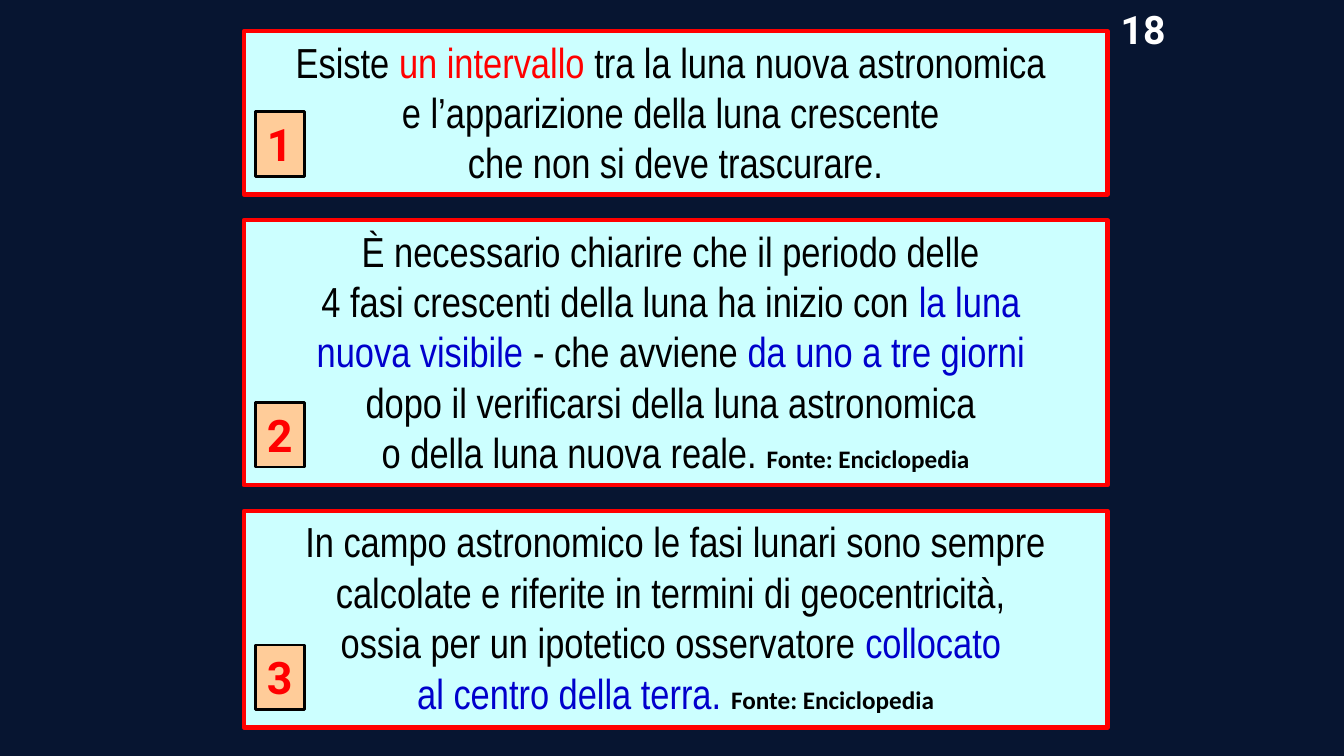
import pptx
import pptx.dml.color
import pptx.enum.shapes
import pptx.enum.text
import pptx.oxml.ns
import pptx.util
from dataclasses import dataclass
from lxml import etree

Pt = pptx.util.Pt


@dataclass(frozen=True)
class Theme:
    night: str = "071531"
    panel: str = "CCFFFF"
    badge: str = "FFCC99"
    red: str = "FF0000"
    blue: str = "0000CC"
    black: str = "000000"
    white: str = "FFFFFF"
    body_font: str = "Arial Narrow"
    source_font: str = "Calibri"
    number_font: str = "Roboto"
    body_size: int = 30
    source_size: int = 18
    badge_size: int = 32
    page_size: int = 28


THEME = Theme()
SOURCE = "source"
PANEL_LEFT, PANEL_WIDTH, PANEL_GAP, FIRST_TOP = 174.2, 617, 18.3, 22.3
PAGE_NUMBER_BOX = (791.3, 0, 50.4, 41)

# Each statement: panel height, then paragraphs of (text, colour or SOURCE)
STATEMENTS = [
    (116.6, [
        [("Esiste ", THEME.black), ("un intervallo ", THEME.red),
         ("tra la luna nuova astronomica ", THEME.black)],
        [("e l’apparizione della luna crescente ", THEME.black)],
        [("che non si deve trascurare.", THEME.black)],
    ]),
    (189.4, [
        [("È necessario chiarire che il periodo delle ", THEME.black)],
        [("4 fasi crescenti della luna ha inizio con ", THEME.black),
         ("la luna ", THEME.blue)],
        [("nuova visibile ", THEME.blue), ("- che avviene ", THEME.black),
         ("da uno a tre giorni ", THEME.blue)],
        [("dopo il verificarsi della luna astronomica ", THEME.black)],
        [("o della luna nuova reale. ", THEME.black),
         ("Fonte: Enciclopedia", SOURCE)],
    ]),
    (154.8, [
        [("In campo astronomico le fasi lunari sono sempre calcolate "
          "e riferite in termini di geocentricità, ", THEME.black)],
        [("ossia per un ipotetico osservatore ", THEME.black),
         ("collocato ", THEME.blue)],
        [("al centro della terra. ", THEME.blue),
         ("Fonte: Enciclopedia", SOURCE)],
    ]),
]


def rgb(colour):
    return pptx.dml.color.RGBColor.from_string(colour)


def add_run(paragraph, text, font, size, colour, bold=False):
    run = paragraph.add_run()
    run.text = text
    run.font.name = font
    run.font.size = Pt(size)
    run.font.bold = bold
    run.font.color.rgb = rgb(colour)
    return run


def outline_run(run, colour):
    """Thin outline in the colour of the letters."""
    qn = pptx.oxml.ns.qn
    outline = etree.Element(qn("a:ln"), w=str(Pt(0.75)))
    fill = etree.SubElement(outline, qn("a:solidFill"))
    etree.SubElement(fill, qn("a:srgbClr"), val=colour)
    run.font._element.insert(0, outline)


def set_frame(shape, wrap):
    frame = shape.text_frame
    frame.word_wrap = wrap
    frame.auto_size = pptx.enum.text.MSO_AUTO_SIZE.SHAPE_TO_FIT_TEXT
    frame.vertical_anchor = pptx.enum.text.MSO_ANCHOR.TOP
    frame.paragraphs[0].alignment = pptx.enum.text.PP_ALIGN.CENTER
    return frame


def add_box(slide, box, fill, line, line_width):
    shape = slide.shapes.add_shape(
        pptx.enum.shapes.MSO_SHAPE.RECTANGLE, *map(Pt, box))
    shape.shadow.inherit = False
    shape.fill.solid()
    shape.fill.fore_color.rgb = rgb(fill)
    shape.line.color.rgb = rgb(line)
    shape.line.width = Pt(line_width)
    return shape


def add_statement(slide, box, number, paragraphs):
    """Framed statement with its number badge at the lower left."""
    left, top, width, height = box
    panel = add_box(slide, box, THEME.panel, THEME.red, 3)
    frame = set_frame(panel, wrap=True)
    for index, parts in enumerate(paragraphs):
        line = frame.add_paragraph() if index else frame.paragraphs[0]
        line.alignment = pptx.enum.text.PP_ALIGN.CENTER
        for text, style in parts:
            if style == SOURCE:
                add_run(line, text, THEME.source_font, THEME.source_size,
                        THEME.black, bold=True)
            else:
                run = add_run(line, text, THEME.body_font, THEME.body_size, style)
                outline_run(run, style)

    # Number badge
    badge_height = 46
    badge_box = (left + 8, top + height - 13 - badge_height, 35.3, badge_height)
    badge = add_box(slide, badge_box, THEME.badge, THEME.black, 2)
    label = set_frame(badge, wrap=False).paragraphs[0]
    add_run(label, str(number), THEME.number_font, THEME.badge_size,
            THEME.red, bold=True)


def add_page_number(slide, box, number):
    page = slide.shapes.add_textbox(*map(Pt, box))
    label = set_frame(page, wrap=False).paragraphs[0]
    add_run(label, number, THEME.number_font, THEME.page_size,
            THEME.white, bold=True)


def main():
    deck = pptx.Presentation()
    deck.slide_width, deck.slide_height = Pt(960), Pt(540)
    slide = deck.slides.add_slide(deck.slide_layouts[6])
    slide.background.fill.solid()
    slide.background.fill.fore_color.rgb = rgb(THEME.night)

    # Statements stacked with equal gaps
    top = FIRST_TOP
    for number, (height, paragraphs) in enumerate(STATEMENTS, start=1):
        add_statement(slide, (PANEL_LEFT, top, PANEL_WIDTH, height),
                      number, paragraphs)
        top += height + PANEL_GAP

    add_page_number(slide, PAGE_NUMBER_BOX, "18")
    deck.save("out.pptx")


if __name__ == "__main__":
    main()
